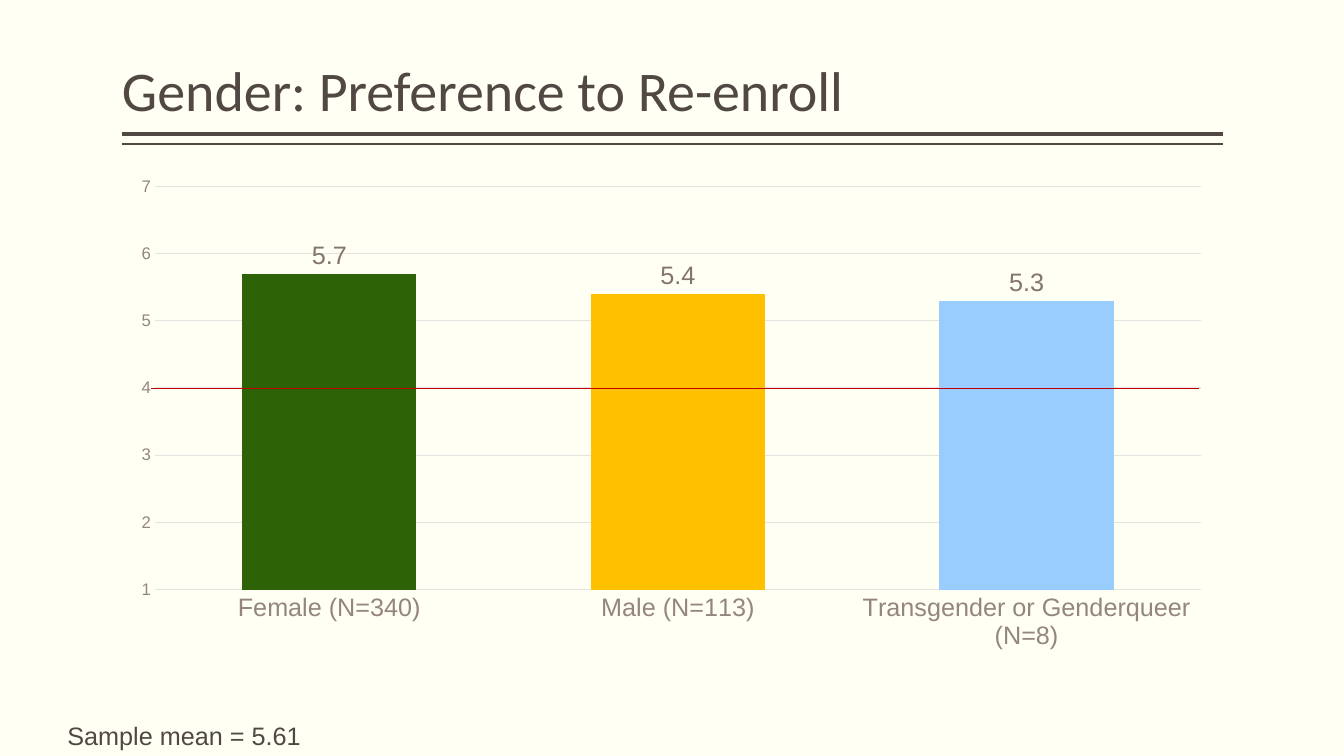
from dataclasses import dataclass

import pptx
import pptx.chart.data
import pptx.dml.color
import pptx.enum.chart
import pptx.enum.shapes
import pptx.enum.text
import pptx.oxml
import pptx.oxml.ns
import pptx.util
from pptx.util import Inches


@dataclass(frozen=True)
class Theme:
    background: str = "FFFFF3"
    ink: str = "514843"
    axis_text: str = "94867E"
    label_text: str = "83746C"
    grid: str = "E6E3E1"
    midpoint: str = "C00000"
    bars: tuple = ("2D6206", "FFC000", "99CCFF")
    heading_font: str = "Calibri"
    body_font: str = "Arial"
    title_size: int = 40
    body_size: int = 18
    scale_size: int = 12


THEME = Theme()
LEFT, RIGHT = 1.21, 12.13


def rgb(color):
    return pptx.dml.color.RGBColor.from_string(color)


def style_font(font, name, size, color):
    font.name = name
    font.size = pptx.util.Pt(size)
    font.color.rgb = rgb(color)


def style_line(line, color, width):
    line.color.rgb = rgb(color)
    line.width = pptx.util.Pt(width)


def add_title(slide, text):
    title = slide.shapes.title
    title.left, title.top = Inches(LEFT), Inches(0.08)
    title.width, title.height = Inches(RIGHT - LEFT), Inches(1.2)
    frame = title.text_frame
    frame.text = text
    frame.word_wrap = True
    frame.auto_size = pptx.enum.text.MSO_AUTO_SIZE.NONE
    frame.vertical_anchor = pptx.enum.text.MSO_ANCHOR.BOTTOM
    frame.margin_left = frame.margin_right = 0
    paragraph = frame.paragraphs[0]
    paragraph.alignment = pptx.enum.text.PP_ALIGN.LEFT
    paragraph.line_spacing = 0.9
    style_font(paragraph.runs[0].font, THEME.heading_font, THEME.title_size, THEME.ink)


def add_rule(slide, left, right, top, color, width):
    rule = slide.shapes.add_connector(
        pptx.enum.shapes.MSO_CONNECTOR.STRAIGHT,
        Inches(left), Inches(top), Inches(right), Inches(top))
    style_line(rule.line, color, width)
    properties = rule._element.spPr
    properties.append(properties.makeelement(pptx.oxml.ns.qn("a:effectLst"), {}))


def set_plot_area(chart, x, y, width, height):
    plot_area = chart._chartSpace.chart.plotArea
    for layout in plot_area.findall(pptx.oxml.ns.qn("c:layout")):
        plot_area.remove(layout)
    settings = {"layoutTarget": "inner", "xMode": "edge", "yMode": "edge",
                "x": x, "y": y, "w": width, "h": height}
    entries = "".join(f'<c:{name} val="{value}"/>' for name, value in settings.items())
    plot_area.insert(0, pptx.oxml.parse_xml(
        f'<c:layout {pptx.oxml.ns.nsdecls("c")}>'
        f'<c:manualLayout>{entries}</c:manualLayout></c:layout>'))


def style_axes(chart):
    tick_none = pptx.enum.chart.XL_TICK_MARK.NONE
    for axis, size in ((chart.category_axis, THEME.body_size),
                       (chart.value_axis, THEME.scale_size)):
        axis.major_tick_mark = axis.minor_tick_mark = tick_none
        style_font(axis.tick_labels.font, THEME.body_font, size, THEME.axis_text)
    style_line(chart.category_axis.format.line, THEME.grid, 1)
    scale = chart.value_axis
    scale.minimum_scale, scale.maximum_scale, scale.major_unit = 1, 7, 1
    scale.format.line.fill.background()
    scale.has_major_gridlines = True
    style_line(scale.major_gridlines.format.line, THEME.grid, 0.75)


def add_preference_chart(slide, scores):
    data = pptx.chart.data.CategoryChartData()
    data.categories = list(scores)
    data.add_series("Series 1", list(scores.values()))
    chart = slide.shapes.add_chart(
        pptx.enum.chart.XL_CHART_TYPE.COLUMN_CLUSTERED,
        Inches(LEFT), Inches(1.75), Inches(RIGHT - LEFT), Inches(5), data).chart
    chart.has_legend = False
    chart.has_title = False
    style_font(chart.font, THEME.body_font, 10, THEME.ink)
    set_plot_area(chart, 0.03, 0.02, 0.95, 0.8)
    style_axes(chart)

    plot = chart.plots[0]
    plot.gap_width, plot.overlap = 100, -24
    plot.vary_by_categories = False
    series = plot.series[0]
    for index, color in enumerate(THEME.bars):
        fill = series.points[index].format.fill
        fill.solid()
        fill.fore_color.rgb = rgb(color)
    labels = series.data_labels
    labels.show_value = True
    labels.position = pptx.enum.chart.XL_LABEL_POSITION.OUTSIDE_END
    style_font(labels.font, THEME.body_font, THEME.body_size, THEME.label_text)


def add_note(slide, text):
    frame = slide.shapes.add_textbox(
        Inches(0.57), Inches(7.1), Inches(2.55), Inches(0.4)).text_frame
    frame.text = text
    frame.word_wrap = False
    frame.auto_size = pptx.enum.text.MSO_AUTO_SIZE.SHAPE_TO_FIT_TEXT
    style_font(frame.paragraphs[0].runs[0].font, THEME.body_font, THEME.body_size, THEME.ink)


def main():
    presentation = pptx.Presentation()
    presentation.slide_width, presentation.slide_height = Inches(13.33), Inches(7.5)
    slide = presentation.slides.add_slide(presentation.slide_layouts[5])
    slide.background.fill.solid()
    slide.background.fill.fore_color.rgb = rgb(THEME.background)

    add_title(slide, "Gender: Preference to Re-enroll")
    add_rule(slide, LEFT, RIGHT, 1.33, THEME.ink, 3)
    add_rule(slide, LEFT, RIGHT, 1.43, THEME.ink, 1)
    add_preference_chart(slide, {
        "Female (N=340)": 5.7,
        "Male (N=113)": 5.4,
        "Transgender or Genderqueer (N=8)": 5.3,
    })
    add_note(slide, "Sample mean = 5.61")
    add_rule(slide, 1.5, 11.89, 3.85, THEME.midpoint, 0.5)
    presentation.save("out.pptx")


if __name__ == "__main__":
    main()
